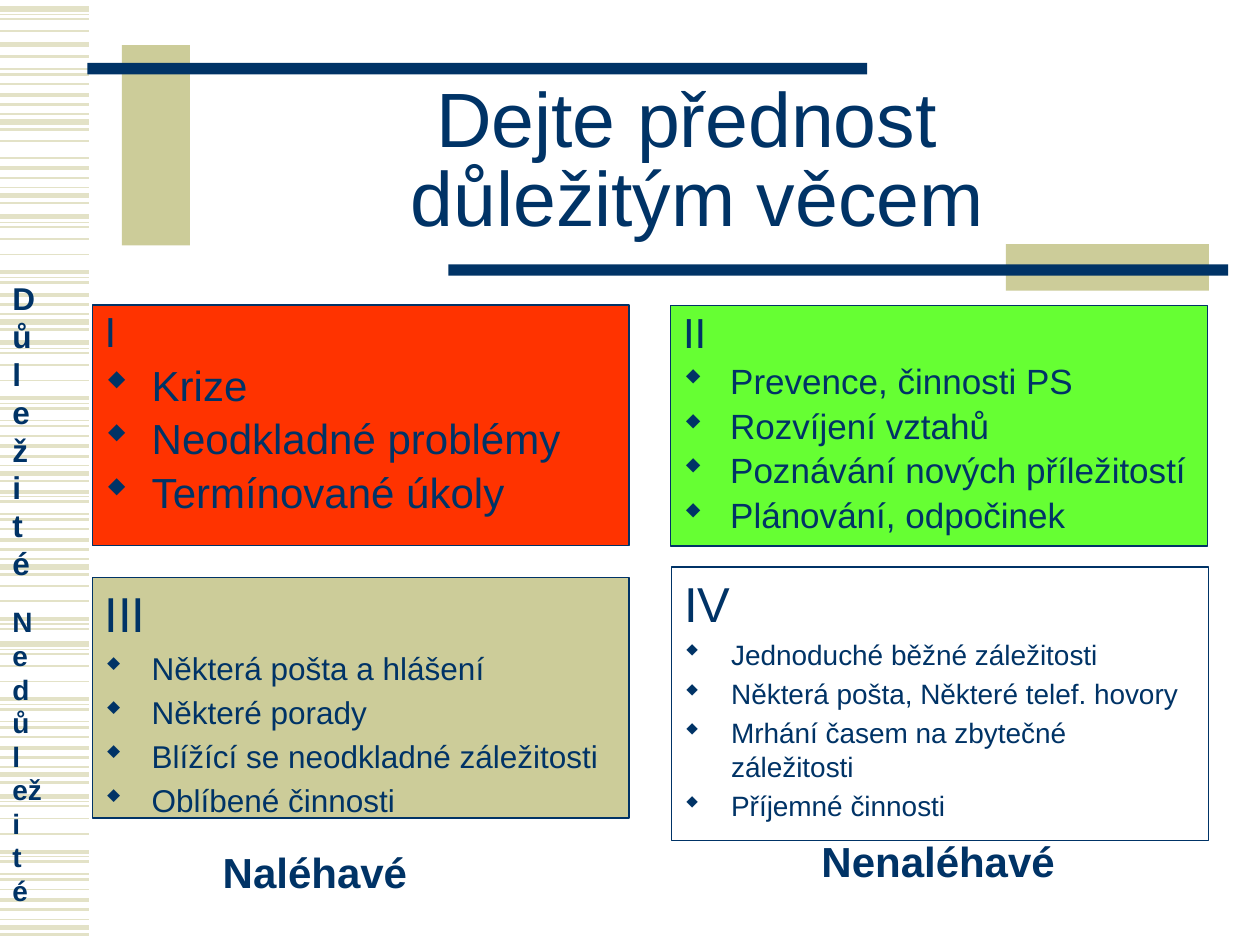
from lxml import etree
from pptx import Presentation
from pptx.dml.color import RGBColor
from pptx.enum.shapes import MSO_CONNECTOR, MSO_SHAPE
from pptx.enum.text import MSO_ANCHOR, MSO_AUTO_SIZE, PP_ALIGN
from pptx.oxml.ns import qn
from pptx.util import Cm, Pt

STRAIGHT = MSO_CONNECTOR.STRAIGHT
RECTANGLE = MSO_SHAPE.RECTANGLE
TOP, MIDDLE = MSO_ANCHOR.TOP, MSO_ANCHOR.MIDDLE
NO_AUTOFIT = MSO_AUTO_SIZE.NONE
LEFT, CENTER = PP_ALIGN.LEFT, PP_ALIGN.CENTER

NAVY = RGBColor(0x00, 0x33, 0x66)
KHAKI = RGBColor(0xCC, 0xCC, 0x99)
PALE_KHAKI = RGBColor(0xE3, 0xE2, 0xC7)
RED = RGBColor(0xFF, 0x33, 0x00)
GREEN = RGBColor(0x66, 0xFF, 0x33)


def style(paragraph, size, bold=False):
    paragraph.font.name = "Arial"
    paragraph.font.size = Pt(size)
    paragraph.font.bold = bold
    paragraph.font.color.rgb = NAVY


def add_rectangle(left, top, width, height, fill):
    rectangle = slide.shapes.add_shape(
        RECTANGLE, Cm(left), Cm(top), Cm(width), Cm(height))
    rectangle.shadow.inherit = False
    rectangle.line.fill.background()
    if fill is None:
        rectangle.fill.background()
    else:
        rectangle.fill.solid()
        rectangle.fill.fore_color.rgb = fill
    return rectangle


prs = Presentation()
prs.slide_width, prs.slide_height = Cm(25.4), Cm(19.05)
slide = prs.slides.add_slide(prs.slide_layouts[5])

stripe_motif = [
    (0, 3), (0.11, 0.75), (0.2, 1), (0.45, 1),
    (0.76, 1), (1.12, 2.25), (1.22, 0.75), (1.32, 1.5),
    (1.57, 0.75), (1.68, 1.5), (1.88, 1), (2.09, 2.25),
    (2.29, 1.5), (2.48, 0.75), (2.64, 3), (2.79, 1.5),
]
stripe_runs = [
    (0.18, 0, 4), (0.89, 0, 1), (-0.18, 7, 16), (2.08, 4, 5),
    (1.3, 10, 16), (4.37, 0, 8), (3.85, 11, 16), (6.91, 0, 16),
    (8.79, 5, 16), (11.36, 3, 8), (12.98, 0, 16), (16.05, 0, 16),
]
for start, first, end in stripe_runs:
    for offset, weight in stripe_motif[first:end]:
        y = Cm(start + offset)
        stripe = slide.shapes.add_connector(STRAIGHT, 0, y, Cm(1.8), y)
        stripe.line.color.rgb = PALE_KHAKI
        stripe.line.width = Pt(weight)
        etree.SubElement(stripe._element.spPr, qn("a:effectLst"))

add_rectangle(2.46, 0.91, 1.37, 4.04, KHAKI)
add_rectangle(1.76, 1.27, 15.72, 0.23, NAVY)
add_rectangle(20.28, 4.92, 4.09, 0.94, KHAKI)
add_rectangle(9.04, 5.33, 15.72, 0.23, NAVY)

title = slide.shapes.title
title.left, title.top, title.width, title.height = Cm(3.81), Cm(1.7), Cm(20.5), Cm(3.18)
title.text_frame.text = "Dejte přednost \vdůležitým věcem"
title.text_frame.auto_size = NO_AUTOFIT
title.text_frame.vertical_anchor = MIDDLE
heading = title.text_frame.paragraphs[0]
heading.alignment = CENTER
heading.line_spacing = 0.85
style(heading, 44)

quadrants = [
    (1.86, 6.15, 4.85, RED, 0.9, 24, 24,
     ["I", "Krize", "Neodkladné problémy", "Termínované úkoly"]),
    (13.52, 6.16, 4.85, GREEN, 0.9, 24, 20,
     ["II", "Prevence, činnosti PS", "Rozvíjení vztahů",
      "Poznávání nových příležitostí", "Plánování, odpočinek"]),
    (1.86, 11.64, 4.85, KHAKI, 1.0, 28, 18,
     ["III", "Některá pošta a hlášení", "Některé porady",
      "Blížící se neodkladné záležitosti", "Oblíbené činnosti"]),
    (13.54, 11.43, 5.51, None, 1.0, 28, 16,
     ["IV", "Jednoduché běžné záležitosti", "Některá pošta, Některé telef. hovory",
      "Mrhání časem na zbytečné záležitosti", "Příjemné činnosti"]),
]
for left, top, height, fill, spacing, numeral_size, item_size, lines in quadrants:
    quadrant = add_rectangle(left, top, 10.82, height, fill)
    quadrant.line.color.rgb = NAVY
    quadrant.line.width = Pt(0.75)
    frame = quadrant.text_frame
    frame.word_wrap = True
    frame.vertical_anchor = TOP
    for index, line in enumerate(lines):
        item = frame.add_paragraph() if index else frame.paragraphs[0]
        size = item_size if index else numeral_size
        item.text = line
        item.alignment = LEFT
        item.line_spacing = spacing
        item.space_before = Pt(0.2 * size)
        properties = item._p.get_or_add_pPr()
        properties.set("marL", str(Cm(0.95)))
        properties.set("indent", str(-Cm(0.95)))
        if index:
            bullet_color = etree.SubElement(properties, qn("a:buClr"))
            etree.SubElement(bullet_color, qn("a:srgbClr"), val=str(NAVY))
            etree.SubElement(properties, qn("a:buFont"),
                             typeface="Wingdings", charset="2")
            etree.SubElement(properties, qn("a:buChar"), char="w")
        style(item, size)

axis_labels = [
    (4.24, 16.94, 4.47, 1.27, "Naléhavé", 24, False),
    (16.31, 16.71, 5.46, 1.27, "Nenaléhavé", 24, False),
    (0, 5.51, 1.11, 6.35, "Dů l ež i\vt é", 18, True),
    (0, 12.07, 1.11, 7.04, "Nedů l ež i\vt é", 16, True),
]
for left, top, width, height, text, size, wrap in axis_labels:
    label = slide.shapes.add_textbox(Cm(left), Cm(top), Cm(width), Cm(height))
    label.text_frame.word_wrap = wrap
    label.text_frame.text = text
    style(label.text_frame.paragraphs[0], size, bold=True)

prs.save("out.pptx")
